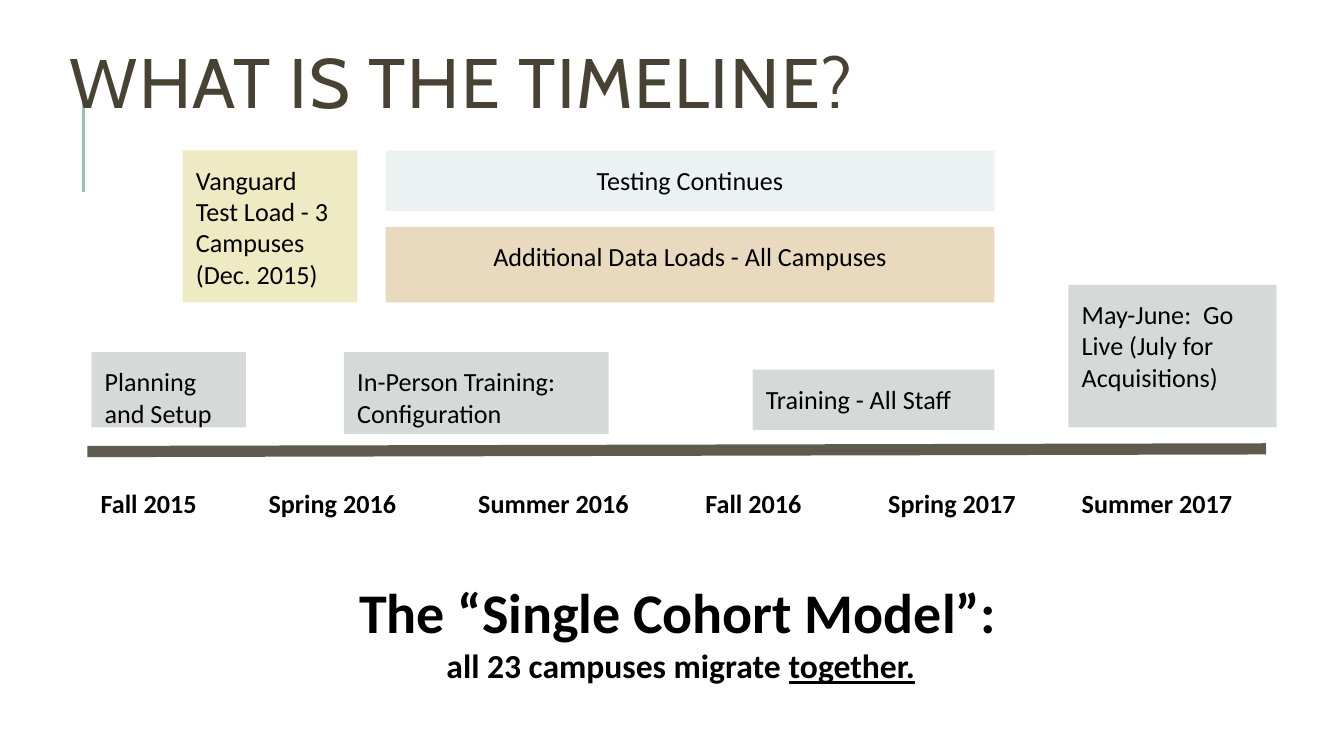
from lxml import etree
from pptx import Presentation
from pptx.dml.color import RGBColor
from pptx.enum import shapes, text
from pptx.oxml import ns
from pptx.util import Inches, Pt

BLACK = RGBColor(0x00, 0x00, 0x00)
TITLE = RGBColor(0x47, 0x42, 0x33)
TEAL = RGBColor(0x9C, 0xBE, 0xBD)
AXIS = RGBColor(0x60, 0x5B, 0x4F)
GREY = RGBColor(0xD5, 0xDA, 0xD8)
YELLOW = RGBColor(0xED, 0xEA, 0xC4)
MINT = RGBColor(0xEB, 0xF2, 0xF2)
TAN = RGBColor(0xE9, 0xD9, 0xBE)

LEFT, CENTER = text.PP_ALIGN.LEFT, text.PP_ALIGN.CENTER

SEASONS = [
    ("Fall 2015", 0.65, 1.22),
    ("Spring 2016", 1.9, 1.45),
    ("Summer 2016", 3.46, 1.55),
    ("Fall 2016", 5.15, 1.45),
    ("Spring 2017", 6.51, 1.45),
    ("Summer 2017", 7.95, 1.55),
]

PHASES = [
    (["Planning and Setup"], (0.68, 2.62, 1.15, 0.56), GREY, LEFT),
    (["Vanguard Test Load - 3 Campuses", "(Dec. 2015)"], (1.36, 1.12, 1.3, 1.13), YELLOW, LEFT),
    (["In-Person Training: Configuration"], (2.56, 2.62, 1.97, 0.61), GREY, LEFT),
    (["Testing Continues"], (2.87, 1.12, 4.53, 0.45), MINT, CENTER),
    (["Training - All Staff"], (5.6, 2.75, 1.8, 0.45), GREY, LEFT),
    (["Additional Data Loads - All Campuses"], (2.87, 1.69, 4.53, 0.56), TAN, CENTER),
    (["May-June:  Go Live (July for Acquisitions)"], (7.95, 2.12, 1.55, 1.06), GREY, LEFT),
]


def add_run(p, content, size=14, font="Calibri", color=BLACK, bold=False,
            underline=False, spacing=None):
    r = p.add_run()
    r.text = content
    r.font.size = Pt(size)
    r.font.name = font
    r.font.color.rgb = color
    r.font.bold = bold
    r.font.underline = underline
    if spacing:
        r._r.get_or_add_rPr().set("spc", str(round(spacing * 100)))


def prepare_frame(sp, anchor=text.MSO_ANCHOR.TOP):
    tf = sp.text_frame
    tf.word_wrap = True
    tf.vertical_anchor = anchor
    tf.margin_left = tf.margin_right = tf.margin_top = tf.margin_bottom = Inches(0.1)
    return tf


def add_text(s, box, **frame):
    return prepare_frame(s.shapes.add_textbox(*map(Inches, box)), **frame)


def add_phase(s, lines, box, fill, align):
    sp = s.shapes.add_shape(shapes.MSO_SHAPE.RECTANGLE, *map(Inches, box))
    sp.shadow.inherit = False
    sp.fill.solid()
    sp.fill.fore_color.rgb = fill
    sp.line.fill.background()
    tf = prepare_frame(sp)
    for i, line in enumerate(lines):
        p = tf.add_paragraph() if i else tf.paragraphs[0]
        p.alignment = align
        add_run(p, line)


def add_line(s, ends, color, width):
    line = s.shapes.add_connector(shapes.MSO_CONNECTOR.STRAIGHT, *map(Inches, ends))
    line.line.color.rgb = color
    line.line.width = Pt(width)
    etree.SubElement(line._element.spPr, ns.qn("a:effectLst"))


def add_title(s):
    p = add_text(s, (0.42, 0.07, 9, 0.94), anchor=text.MSO_ANCHOR.BOTTOM).paragraphs[0]
    p.line_spacing = 0.8
    add_run(p, "WHAT IS THE TIMELINE?", size=37.5, font="Cabin", color=TITLE, spacing=0.8)


def add_summary(s):
    tf = add_text(s, (0.71, 4.2, 8.71, 1.02))
    heading, detail = tf.paragraphs[0], tf.add_paragraph()
    heading.alignment = detail.alignment = CENTER
    add_run(heading, "The “Single Cohort Model”:", size=30, bold=True)
    add_run(heading, " ", bold=True)
    add_run(detail, "all 23 campuses migrate ", size=18, bold=True)
    add_run(detail, "together.", size=18, bold=True, underline=True)


def main():
    prs = Presentation()
    prs.slide_width = Inches(10)
    prs.slide_height = prs.slide_width * 9 // 16
    s = prs.slides.add_slide(prs.slide_layouts[6])
    add_line(s, (0.62, 1.43, 0.62, 0.68), TEAL, 1.5)
    add_title(s)
    add_line(s, (0.65, 3.36, 9.42, 3.34), AXIS, 6)
    for label, left, width in SEASONS:
        tf = add_text(s, (left, 3.53, width, 0.45))
        add_run(tf.paragraphs[0], label, bold=True)
    for phase in PHASES:
        add_phase(s, *phase)
    add_summary(s)
    prs.save("out.pptx")


if __name__ == "__main__":
    main()
